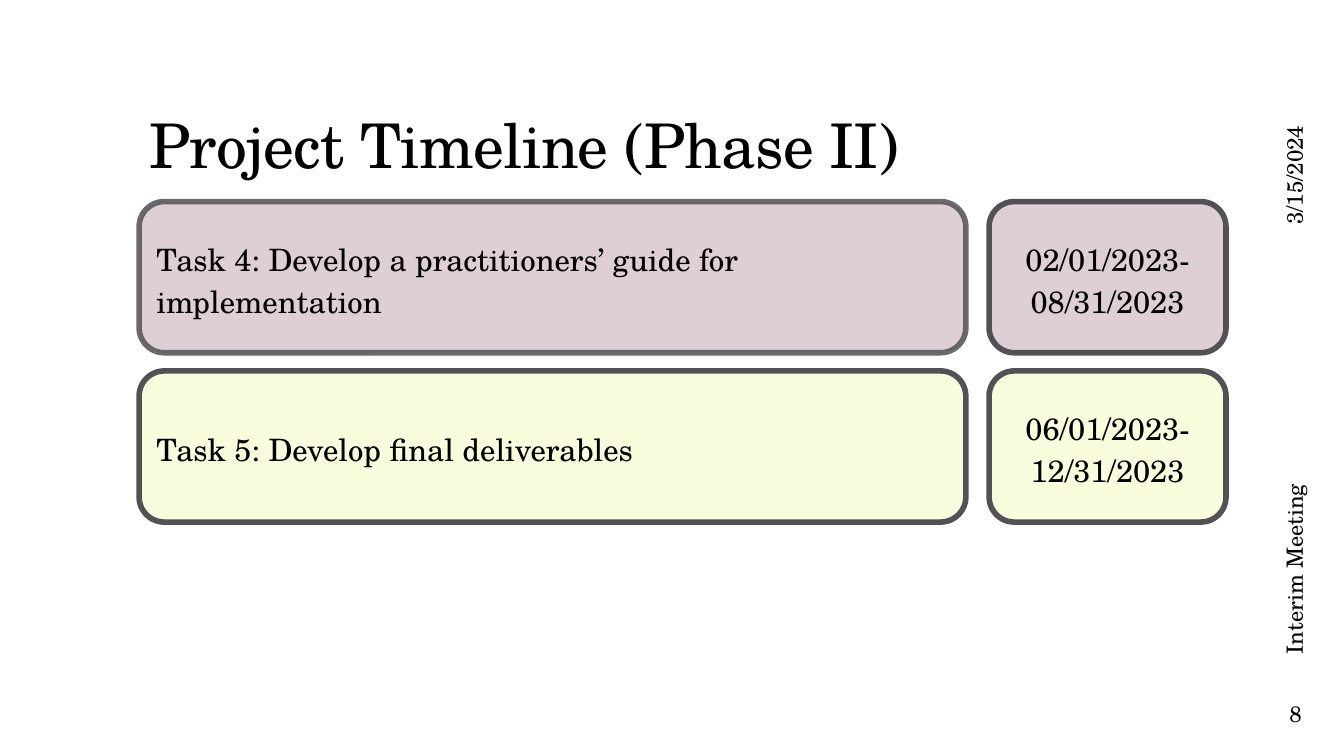
import pptx
import pptx.util
import pptx.dml.color
import pptx.enum.shapes
import pptx.enum.text
import pptx.oxml.ns
import lxml.etree

Inches = pptx.util.Inches
Pt = pptx.util.Pt
RGBColor = pptx.dml.color.RGBColor
ALIGN = pptx.enum.text.PP_ALIGN
ANCHOR = pptx.enum.text.MSO_ANCHOR

FONT = "TeX Gyre Schola"
BLACK = RGBColor(0x00, 0x00, 0x00)
OUTLINE = RGBColor(0x52, 0x52, 0x56)
MAUVE = RGBColor(0xBC, 0xA0, 0xAB)
PALE_MAUVE = RGBColor(0xDD, 0xCF, 0xD5)
LIME = RGBColor(0xEB, 0xF1, 0x7B)
PALE_LIME = RGBColor(0xFA, 0xFC, 0xDE)


def write(shape, text, size, align=ALIGN.LEFT, anchor=ANCHOR.TOP, spacing=1.0):
    """Put one formatted paragraph in the shape and return its run."""
    frame = shape.text_frame
    frame.word_wrap = True
    frame.vertical_anchor = anchor
    frame.text = text
    para = frame.paragraphs[0]
    para.alignment = align
    para.line_spacing = spacing
    span = para.runs[0]
    span.font.name = FONT
    span.font.size = Pt(size)
    span.font.color.rgb = BLACK
    return span


def set_opacity(fill_parent, percent):
    color = fill_parent.find(".//" + pptx.oxml.ns.qn("a:srgbClr"))
    alpha = lxml.etree.SubElement(color, pptx.oxml.ns.qn("a:alpha"))
    alpha.set("val", str(percent * 1000))


deck = pptx.Presentation()
deck.slide_width = Inches(13.33)
deck.slide_height = Inches(7.5)
page = deck.slides.add_slide(deck.slide_layouts[6])

title = page.shapes.add_textbox(Inches(1.38), Inches(0.4), Inches(10.6), Inches(1.45))
title_span = write(title, "Project Timeline (Phase II)", 44, anchor=ANCHOR.BOTTOM, spacing=0.9)
title_span.font._element.set("spc", "-50")

# Task rows: task, dates, task fill, its opacity, date fill, task outline opacity
tasks = [
    ("Task 4: Develop a practitioners’ guide for implementation",
     "02/01/2023-08/31/2023", MAUVE, 50, PALE_MAUVE, 85),
    ("Task 5: Develop final deliverables",
     "06/01/2023-12/31/2023", LIME, 25, PALE_LIME, 100),
]
for row, (task, dates, task_fill, opacity, date_fill, line_opacity) in enumerate(tasks):
    cells = [
        (1.38, 8.2, task, ALIGN.LEFT, task_fill, opacity, line_opacity),
        (9.81, 2.35, dates, ALIGN.CENTER, date_fill, 100, 100),
    ]
    for left, width, text, align, color, fill_alpha, line_alpha in cells:
        box = page.shapes.add_shape(
            pptx.enum.shapes.MSO_SHAPE.ROUNDED_RECTANGLE,
            Inches(left), Inches(2 + 1.68 * row), Inches(width), Inches(1.5))
        box.shadow.inherit = False
        box.fill.solid()
        box.fill.fore_color.rgb = color
        box.line.color.rgb = OUTLINE
        box.line.width = Pt(4)
        properties = box._element.spPr
        if fill_alpha < 100:
            set_opacity(properties.find(pptx.oxml.ns.qn("a:solidFill")), fill_alpha)
        if line_alpha < 100:
            set_opacity(properties.find(pptx.oxml.ns.qn("a:ln")), line_alpha)
        write(box, text, 22, align, ANCHOR.MIDDLE, 1.15)

# Rotated side labels
for left, top, width, text in [(11.81, 1.09, 2.08, "3/15/2024"),
                               (10.89, 4.43, 3.92, "Interim Meeting")]:
    label = page.shapes.add_textbox(Inches(left), Inches(top), Inches(width), Inches(0.4))
    label.rotation = 270
    write(label, text, 16)

number = page.shapes.add_textbox(Inches(12.35), Inches(6.75), Inches(1), Inches(0.65))
write(number, "8", 16, ALIGN.CENTER, ANCHOR.MIDDLE)
frame = number.text_frame
frame.margin_left = frame.margin_right = Inches(0.05)

deck.save("out.pptx")
